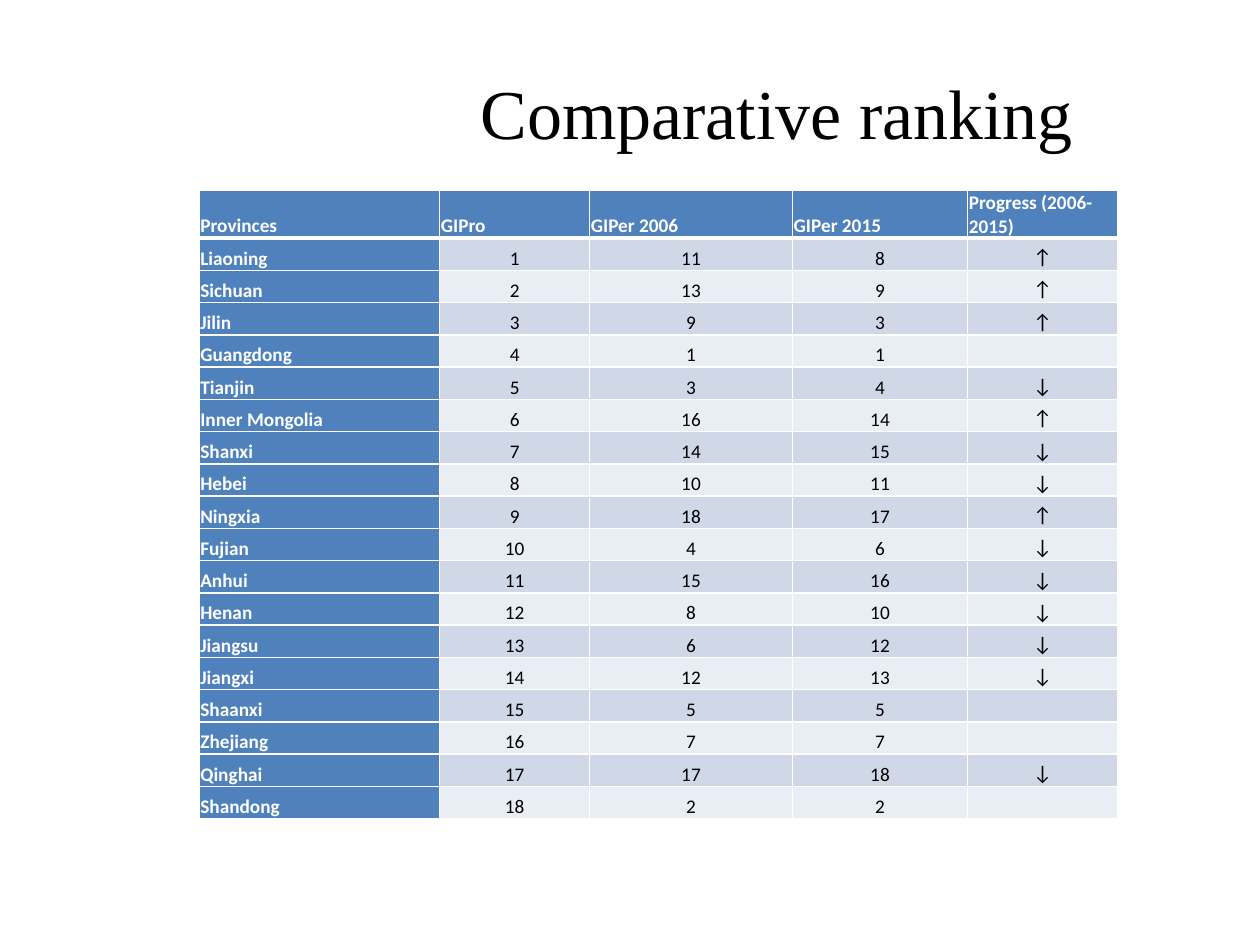
from dataclasses import dataclass

from lxml.etree import SubElement
from pptx import Presentation
from pptx.dml.color import RGBColor as Color
from pptx.enum.text import MSO_ANCHOR as Anchor, PP_ALIGN as Align
from pptx.oxml.ns import qn
from pptx.util import Inches, Pt

TITLE = "Comparative ranking"
HEADERS = ["Provinces", "GIPro", "GIPer 2006", "GIPer 2015", "Progress (2006-2015)"]
UP, DOWN, SAME = "↑", "↓", ""
# Province, GIPer rank in 2006 and 2015, progress; listed in GIPro order
RANKINGS = [
    ("Liaoning", 11, 8, UP),
    ("Sichuan", 13, 9, UP),
    ("Jilin", 9, 3, UP),
    ("Guangdong", 1, 1, SAME),
    ("Tianjin", 3, 4, DOWN),
    ("Inner Mongolia", 16, 14, UP),
    ("Shanxi", 14, 15, DOWN),
    ("Hebei", 10, 11, DOWN),
    ("Ningxia", 18, 17, UP),
    ("Fujian", 4, 6, DOWN),
    ("Anhui", 15, 16, DOWN),
    ("Henan", 8, 10, DOWN),
    ("Jiangsu", 6, 12, DOWN),
    ("Jiangxi", 12, 13, DOWN),
    ("Shaanxi", 5, 5, SAME),
    ("Zhejiang", 7, 7, SAME),
    ("Qinghai", 17, 18, DOWN),
    ("Shandong", 2, 2, SAME),
]

COLUMN_WIDTHS = [1.91, 1.19, 1.61, 1.39, 1.19]
TABLE_LEFT, TABLE_TOP, TABLE_HEIGHT = 1.58, 1.51, 4.99
HEADER_HEIGHT = 0.38


@dataclass(frozen=True)
class Theme:
    title_font: str = "Times New Roman"
    table_font: str = "Calibri"
    title_size: int = 40
    table_size: int = 11
    arrow_size: int = 12
    border: int = 1
    header_rule: int = 3
    text: str = "000000"
    white: str = "FFFFFF"
    heading_fill: str = "4F81BD"
    bands: tuple = ("D0D8E8", "E9EDF4")


THEME = Theme()


def format_text(paragraph, font_name, size, color, bold, alignment):
    paragraph.alignment = alignment
    for run in paragraph.runs:
        run.font.name = font_name
        run.font.size = Pt(size)
        run.font.bold = bold
        run.font.color.rgb = Color.from_string(color)
    if not paragraph.runs:
        # An empty cell needs a small end mark so that its row stays low
        SubElement(paragraph._p, qn("a:endParaRPr"), sz=str(size * 100))


def set_borders(cell, top, bottom):
    """Draw white cell borders; must run before the cell gets its fill."""
    properties = cell._tc.get_or_add_tcPr()
    widths = {"L": THEME.border, "R": THEME.border, "T": top, "B": bottom}
    for side, width in widths.items():
        line = SubElement(properties, qn(f"a:ln{side}"), w=str(Pt(width)))
        fill = SubElement(line, qn("a:solidFill"))
        SubElement(fill, qn("a:srgbClr"), val=THEME.white)


def style_cell(cell, row, column):
    is_header = row == 0
    is_heading = is_header or column == 0
    set_borders(
        cell,
        top=THEME.header_rule if row == 1 else THEME.border,
        bottom=THEME.header_rule if is_header else THEME.border,
    )
    cell.fill.solid()
    fill = THEME.heading_fill if is_heading else THEME.bands[(row - 1) % 2]
    cell.fill.fore_color.rgb = Color.from_string(fill)
    cell.vertical_anchor = Anchor.BOTTOM
    cell.margin_left = cell.margin_right = cell.margin_top = Inches(0.01)
    cell.margin_bottom = 0
    is_arrow = not is_header and column == len(HEADERS) - 1
    format_text(
        cell.text_frame.paragraphs[0],
        THEME.table_font,
        THEME.arrow_size if is_arrow else THEME.table_size,
        THEME.white if is_heading else THEME.text,
        is_heading,
        Align.LEFT if is_heading else Align.CENTER,
    )


def add_title(slide):
    box = slide.shapes.add_textbox(Inches(3.46), Inches(0.54), Inches(5.41), Inches(0.69))
    frame = box.text_frame
    frame.word_wrap = True
    frame.vertical_anchor = Anchor.MIDDLE
    frame.text = TITLE
    format_text(frame.paragraphs[0], THEME.title_font, THEME.title_size,
                THEME.text, False, Align.CENTER)


def add_ranking_table(slide):
    rows = [HEADERS] + [
        (province, rank, *results)
        for rank, (province, *results) in enumerate(RANKINGS, start=1)
    ]
    table = slide.shapes.add_table(
        len(rows), len(HEADERS), Inches(TABLE_LEFT), Inches(TABLE_TOP),
        Inches(sum(COLUMN_WIDTHS)), Inches(TABLE_HEIGHT),
    ).table
    table.first_col = True
    for column, width in zip(table.columns, COLUMN_WIDTHS):
        column.width = Inches(width)
    body_height = (TABLE_HEIGHT - HEADER_HEIGHT) / len(RANKINGS)
    for row, values in enumerate(rows):
        table.rows[row].height = Inches(body_height if row else HEADER_HEIGHT)
        for column, value in enumerate(values):
            cell = table.cell(row, column)
            cell.text_frame.text = str(value)
            style_cell(cell, row, column)


def main():
    presentation = Presentation()
    presentation.slide_width = Inches(10)
    presentation.slide_height = Inches(7.5)
    slide = presentation.slides.add_slide(presentation.slide_layouts[6])
    add_title(slide)
    add_ranking_table(slide)
    presentation.save("out.pptx")


if __name__ == "__main__":
    main()
